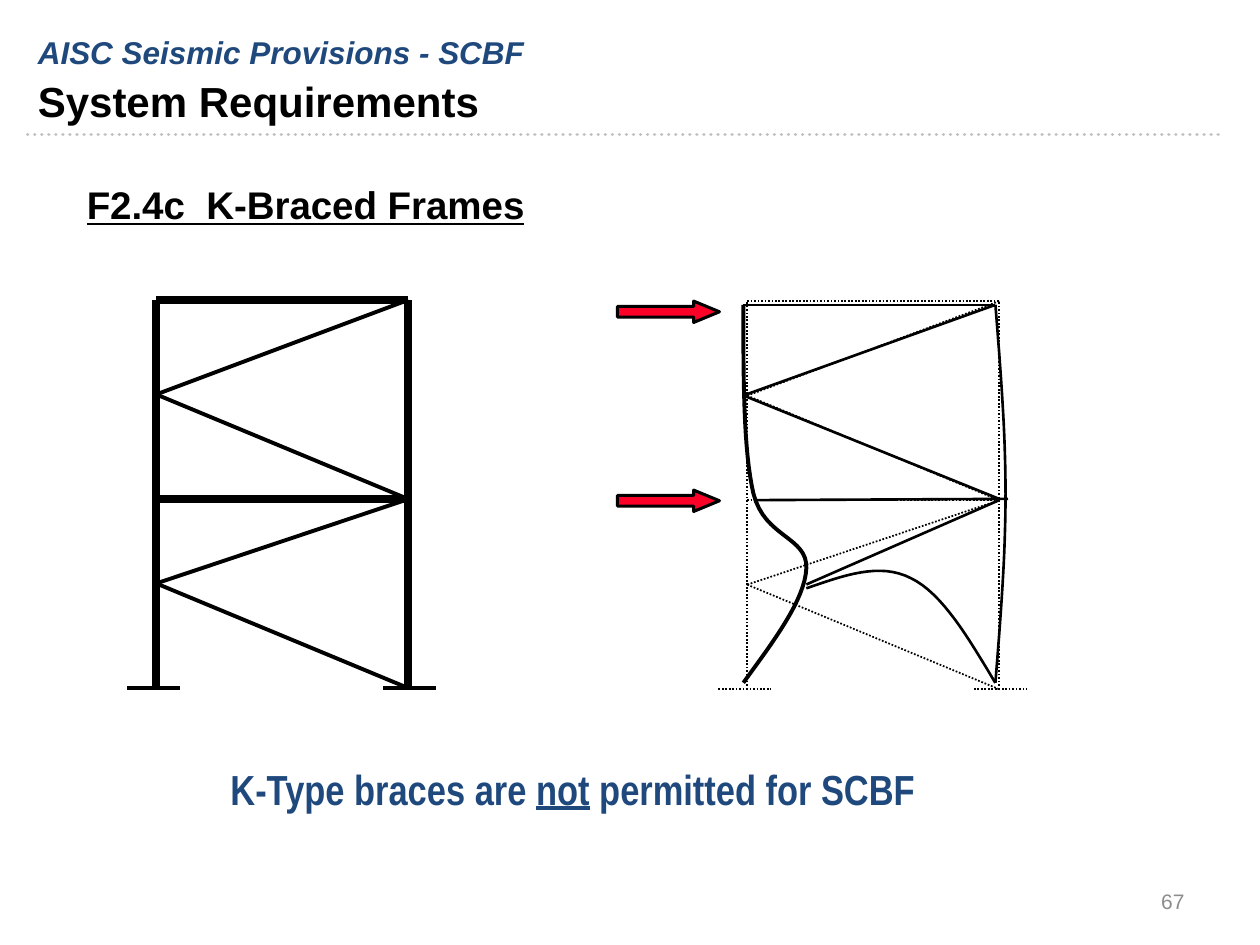
from lxml import etree
from pptx import Presentation
from pptx.dml.color import RGBColor
from pptx.enum.dml import MSO_LINE
from pptx.enum.shapes import MSO_CONNECTOR, MSO_SHAPE
from pptx.enum.text import MSO_ANCHOR, MSO_AUTO_SIZE, PP_ALIGN
from pptx.oxml.ns import qn
from pptx.util import Pt

STRAIGHT, RIGHT_ARROW = MSO_CONNECTOR.STRAIGHT, MSO_SHAPE.RIGHT_ARROW
DOTTED = MSO_LINE.ROUND_DOT
TOP, MIDDLE = MSO_ANCHOR.TOP, MSO_ANCHOR.MIDDLE
LEFT, RIGHT = PP_ALIGN.LEFT, PP_ALIGN.RIGHT

BLACK = RGBColor(0x00, 0x00, 0x00)
NAVY = RGBColor(0x1F, 0x49, 0x7D)
RED = RGBColor(0xFC, 0x01, 0x28)
RULE_GREY = RGBColor(0xBF, 0xBF, 0xBF)
NUMBER_GREY = RGBColor(0x8C, 0x8C, 0x8C)

CURVE_STEPS = 16


def style_line(line, width, color=BLACK, dash=None):
    line.color.rgb = color
    line.width = Pt(width)
    if dash:
        line.dash_style = dash


def add_line(shapes, start, end, width, color=BLACK, dash=None):
    ends = [Pt(v) for v in (*start, *end)]
    c = shapes.add_connector(STRAIGHT, *ends)
    style_line(c.line, width, color, dash)
    etree.SubElement(c._element.spPr, qn("a:effectLst"))
    return c


def add_curve(shapes, origin, knots, width):
    """Draw joined cubic curves; every third knot lies on the curve."""
    points = [knots[0]]
    for i in range(0, len(knots) - 1, 3):
        for step in range(1, CURVE_STEPS + 1):
            t = step / CURVE_STEPS
            weights = ((1 - t) ** 3, 3 * t * (1 - t) ** 2,
                       3 * t ** 2 * (1 - t), t ** 3)
            points.append([sum(w * k[axis] for w, k in zip(weights, knots[i:i + 4]))
                           for axis in (0, 1)])
    placed = [(Pt(origin[0] + x), Pt(origin[1] + y)) for x, y in points]
    builder = shapes.build_freeform(*placed[0])
    builder.add_line_segments(placed[1:], close=False)
    sp = builder.convert_to_shape()
    sp.shadow.inherit = False
    sp.fill.background()
    style_line(sp.line, width)


def write(sp, box, runs, size, color, align=LEFT, anchor=TOP, name="Arial", **base):
    """Place a text shape and fill it with (text, font values) runs."""
    for attr, value in zip(("left", "top", "width", "height"), box):
        setattr(sp, attr, Pt(value))
    tf = sp.text_frame
    tf.word_wrap = True
    tf.auto_size = MSO_AUTO_SIZE.NONE
    tf.vertical_anchor = anchor
    p = tf.paragraphs[0]
    p.alignment = align
    p.space_before = Pt(0)
    for text, extra in runs:
        r = p.add_run()
        r.text = text
        r.font.color.rgb = color
        values = {"name": name, "size": Pt(size), **base, **extra}
        for attr, value in values.items():
            setattr(r.font, attr, value)
    return p


def add_text(s, box, *args, **kwargs):
    return write(s.shapes.add_textbox(0, 0, 0, 0), box, *args, **kwargs)


def header(s, box):
    left, top, width = box
    write(s.shapes.title, (left, top + 24.5, width, 31.7),
          [("System Requirements", {})], 24, BLACK, bold=True, italic=False)
    p = write(s.placeholders[1], (left, top, width, 22.3),
              [("AISC Seismic Provisions - SCBF", {})], 18, NAVY,
              bold=True, italic=True)
    pPr = p._p.get_or_add_pPr()
    pPr.set("marL", "0")
    pPr.set("indent", "0")
    etree.SubElement(pPr, qn("a:buNone"))
    rule = add_line(s.shapes, (15.84, 77), (699.84, 77), 2, RULE_GREY, DOTTED)
    rule.line._get_or_add_ln().set("cap", "rnd")


def braced_frame(s, box, member_width, brace_width, dash=None):
    """Two-storey K-braced frame on two footings."""
    left, top, width, height = box
    right, base = left + width, top + height
    floor = top + 113.8
    shapes = s.shapes.add_group_shape().shapes

    # Columns and beams
    for x in (left, right):
        add_line(shapes, (x, base), (x, top), member_width, dash=dash)
    for y in (top, floor):
        add_line(shapes, (left, y), (right, y), member_width, dash=dash)
    # Footings
    for x in (left - 16.5, right - 14.4):
        add_line(shapes, (x, base), (x + 30.2, base), brace_width, dash=dash)
    # Braces zigzag down the frame
    zigzag = [(right, top), (left, top + 54), (right, floor),
              (left, top + 162), (right, base)]
    for start, end in zip(zigzag, zigzag[1:]):
        add_line(shapes, start, end, brace_width, dash=dash)


def deformed_frame(s, box):
    left, top, width, height = box
    # Left column, buckled lower brace and right column
    curves = [
        (2.25, [(0, height), (17.3, 192.2), (35.3, 168.5), (36, 150.5),
                (36.7, 132.5), (12.2, 133.2), (5.8, 108),
                (0, 83.5), (0, 41.8), (0, 0)]),
        (1.5, [(36, 162), (56.9, 154.8), (77.8, 146.9), (95.8, 156.2),
               (113.8, 164.9), (128.9, 190.8), (width, height)]),
        (1.5, [(width, height), (146.9, 180), (149.8, 144), (149.8, 108),
               (149.8, 72), (146.9, 36), (width, 0)]),
    ]
    for line_width, knots in curves:
        add_curve(s.shapes, (left, top), knots, line_width)

    # Straight braces and beams
    members = [((36, 159.8), (146.2, 111.6)), ((7.2, 111.6), (151.2, 110.9)),
               ((0, 0), (width, 0)), ((width, 0), (0, 51.8)),
               ((146.2, 110.9), (0, 51.8))]
    for (x1, y1), (x2, y2) in members:
        add_line(s.shapes, (left + x1, top + y1), (left + x2, top + y2), 1.5)


def load_arrow(s, box):
    sp = s.shapes.add_shape(RIGHT_ARROW, *[Pt(v) for v in box])
    sp.shadow.inherit = False
    sp.adjustments[0], sp.adjustments[1] = 0.5, 1.208
    sp.fill.solid()
    sp.fill.fore_color.rgb = RED
    style_line(sp.line, 1.75)


def main():
    prs = Presentation()
    prs.slide_width, prs.slide_height = Pt(720), Pt(540)
    s = prs.slides.add_slide(prs.slide_layouts[1])

    header(s, (14.4, 15.1, 646.6))
    add_text(s, (42.5, 100, 494, 33.8), [("F2.4c  K-Braced Frames", {})],
             22, BLACK, bold=True, underline=True)

    # Undeformed frame, then the deformed one over its dotted outline
    braced_frame(s, (89.3, 171.4, 144, 221.8), 4.5, 2.25)
    braced_frame(s, (427, 172.1, 144, 221.8), 1, 1, DOTTED)
    deformed_frame(s, (424.8, 174.2, 144, 216))
    for top in (172.1, 280.1):
        load_arrow(s, (352.8, top, 58.3, 12.2))

    # Conclusion and slide number
    add_text(s, (124.6, 432.7, 426.2, 36),
             [("K-Type braces are ", {}), ("not", {"underline": True}),
              (" permitted for SCBF", {})],
             24, NAVY, name="Arial Narrow", bold=True)
    add_text(s, (516.2, 500.4, 167.8, 28.8), [("67", {})], 12, NUMBER_GREY,
             align=RIGHT, anchor=MIDDLE)
    prs.save("out.pptx")


if __name__ == "__main__":
    main()
